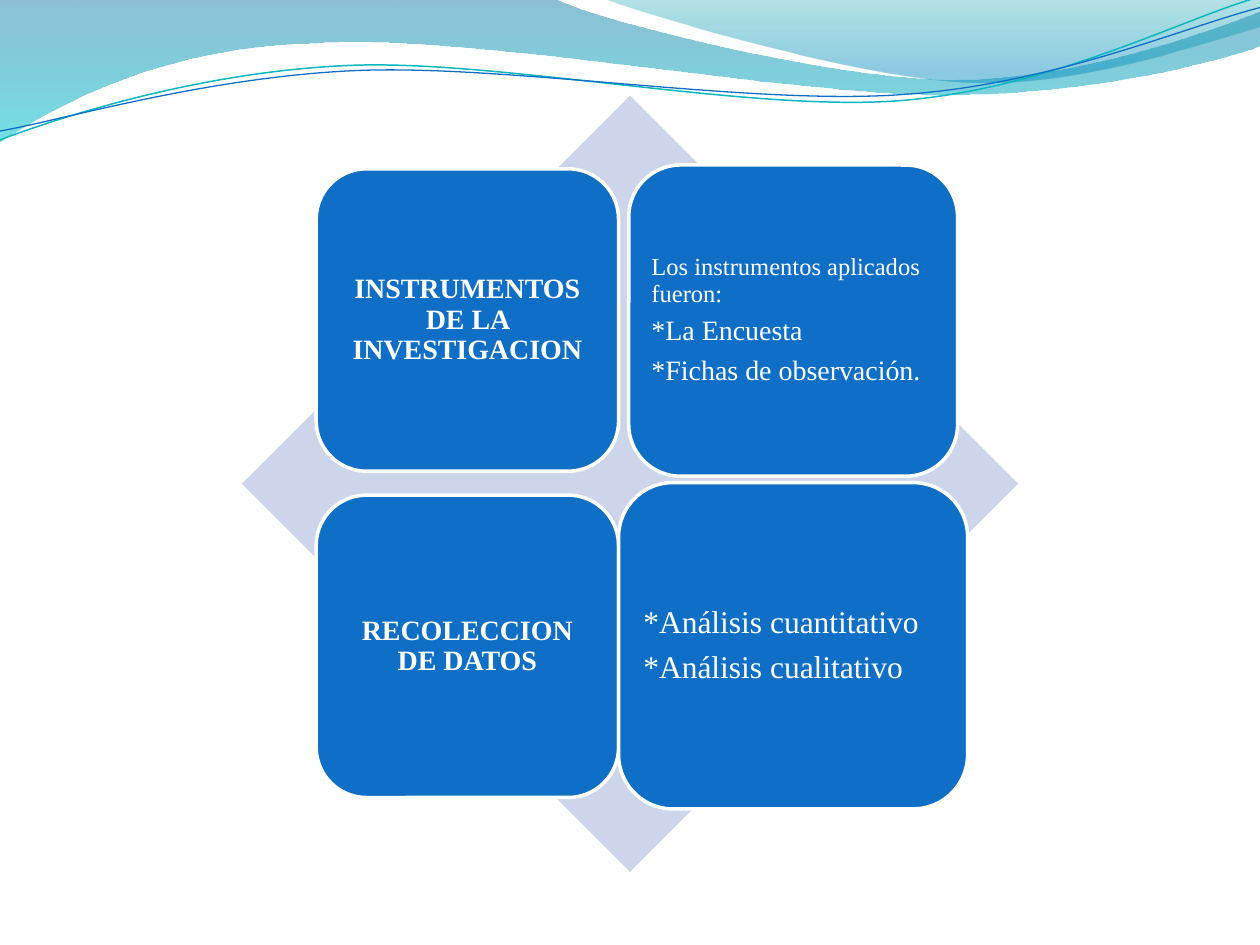
import math

from lxml import etree
from pptx import Presentation
from pptx.dml.color import RGBColor
from pptx.enum import shapes, text
from pptx.oxml import ns
from pptx.util import Inches, Pt

FONT = "Times New Roman"
BLUE, WHITE, PALE = "0F6FC6", "FFFFFF", "CCD5EA"
LINE_TILT = -2.7

# Each wave is a start point followed by lines (1 point) and cubic curves (3 points).
BROAD_WAVE = [[(0, 0)], [(4.4, -0.01)],
              [(4.76, 0.17), (6.64, 0.63), (7.58, 0.63)],
              [(8.53, 0.63), (9.58, 0.26), (10, 0.09)],
              [(10.01, 0.36)],
              [(9.83, 0.44), (8.7, 0.76), (7.46, 0.75)],
              [(6.22, 0.75), (3.82, 0.28), (2.57, 0.34)],
              [(1.29, 0.36), (0.46, 0.83), (-0.01, 1.13)], [(0, 0)]]
CORNER_WAVE = [[(4.79, -0.01)],
               [(5.09, 0.11), (6.82, 0.62), (7.69, 0.65)],
               [(8.56, 0.69), (9.61, 0.32), (10, 0.21)],
               [(10, 0)], [(4.79, -0.01)]]
TEAL_LINE = [[(0, 1.11)],
             [(0.48, 0.93), (1.58, 0.57), (2.77, 0.52)],
             [(3.95, 0.47), (5.93, 0.89), (7.13, 0.8)],
             [(8.33, 0.71), (9.38, 0.15), (9.98, -0.02)]]
BLUE_LINE = [[(0, 1.04)],
             [(0.47, 0.96), (1.64, 0.61), (2.83, 0.56)],
             [(4.03, 0.51), (5.97, 0.84), (7.17, 0.75)],
             [(8.36, 0.67), (9.41, 0.21), (10, 0.06)]]


def color(value):
    return RGBColor.from_string(value)


def to_local(point, box, tilt):
    """Place a slide point inside a box that is tilted about its centre."""
    left, top, width, height = box
    x, y = point[0] - left - width / 2, point[1] - top - height / 2
    cos, sin = math.cos(math.radians(tilt)), math.sin(math.radians(tilt))
    return x * cos + y * sin + width / 2, y * cos - x * sin + height / 2


def add_wave(slide, segments, box, closed, tilt=0):
    """Build the outline from its end points, then bend the curved segments."""
    start, *ends = [(Inches(s[-1][0]), Inches(s[-1][1])) for s in segments]
    builder = slide.shapes.build_freeform(*start)
    builder.add_line_segments(ends, close=closed)
    wave = builder.convert_to_shape()
    wave.shadow.inherit = False
    wave.left, wave.top, wave.width, wave.height = map(Inches, box)
    wave.rotation = tilt

    outline = next(wave.element.spPr.iter(ns.qn("a:path")))
    outline.set("w", str(wave.width))
    outline.set("h", str(wave.height))
    for move, segment in zip(list(outline), segments):
        for old in list(move):
            move.remove(old)
        if len(segment) == 3:
            curve = etree.Element(ns.qn("a:cubicBezTo"))
            outline.replace(move, curve)
            move = curve
        for point in segment:
            x, y = to_local(point, box, tilt)
            etree.SubElement(move, ns.qn("a:pt"), x=str(Inches(x)), y=str(Inches(y)))
    return wave


def add_gradient_wave(slide, segments, box, stops):
    """Fill from top to bottom; a stop is position, colour and opacity in percent."""
    wave = add_wave(slide, segments, box, closed=True)
    wave.line.fill.background()
    wave.fill.gradient()
    wave.fill.gradient_angle = 270
    for stop, (position, value, _) in zip(wave.fill.gradient_stops, stops):
        stop.position = position
        stop.color.rgb = color(value)
    for rgb, (_, _, opacity) in zip(wave.element.spPr.iter(ns.qn("a:srgbClr")), stops):
        etree.SubElement(rgb, ns.qn("a:alpha"), val=str(opacity * 1000))


def add_wave_line(slide, segments, box, value, width):
    wave = add_wave(slide, segments, box, closed=False, tilt=LINE_TILT)
    wave.fill.background()
    wave.line.color.rgb = color(value)
    wave.line.width = Pt(width)


def add_block(slide, kind, box, fill, outline=None):
    block = slide.shapes.add_shape(kind, *map(Inches, box))
    block.shadow.inherit = False
    block.fill.solid()
    block.fill.fore_color.rgb = color(fill)
    if outline:
        block.line.color.rgb = color(outline)
        block.line.width = Pt(2)
    else:
        block.line.fill.background()
    return block


def write(frame, lines, align=text.PP_ALIGN.LEFT, bold=False, inset=0.07):
    """Write one paragraph for each pair of wording and size."""
    frame.word_wrap = True
    frame.vertical_anchor = text.MSO_ANCHOR.MIDDLE
    frame.margin_left = frame.margin_right = Inches(inset)
    frame.margin_top = frame.margin_bottom = Inches(inset)
    for index, (wording, size) in enumerate(lines):
        paragraph = frame.add_paragraph() if index else frame.paragraphs[0]
        paragraph.alignment = align
        paragraph.line_spacing = 0.9
        paragraph.space_after = Pt(round(size * 0.35, 1))
        run = paragraph.add_run()
        run.text = wording
        run.font.name = FONT
        run.font.size = Pt(size)
        run.font.bold = bold
        run.font.color.rgb = color(WHITE)


def add_card(slide, box, lines, **style):
    card = add_block(slide, shapes.MSO_SHAPE.ROUNDED_RECTANGLE, box, BLUE, WHITE)
    write(card.text_frame, lines, **style)


def main():
    deck = Presentation()
    deck.slide_width, deck.slide_height = Inches(10), Inches(7.5)
    slide = deck.slides.add_slide(deck.slide_layouts[6])

    add_gradient_wave(slide, BROAD_WAVE, (-0.01, -0.01, 10.02, 1.14),
                      [(0, "0074A1", 45), (1, "00C6CF", 55)])
    add_gradient_wave(slide, CORNER_WAVE, (4.79, -0.01, 5.21, 0.7),
                      [(0, "00A1A9", 30), (0.8, "008BBF", 45)])
    add_wave_line(slide, TEAL_LINE, (-0.02, 0.22, 10.02, 0.71), "0AB8BF", 0.85)
    add_wave_line(slide, BLUE_LINE, (-0.02, 0.3, 10.03, 0.58), BLUE, 0.75)

    add_block(slide, shapes.MSO_SHAPE.DIAMOND, (1.92, 0.76, 6.16, 6.16), PALE)
    heading = {"align": text.PP_ALIGN.CENTER, "bold": True}
    add_card(slide, (2.51, 1.34, 2.4, 2.4),
             [("INSTRUMENTOS DE LA INVESTIGACION", 16)], **heading)
    add_card(slide, (4.99, 1.31, 2.61, 2.47),
             [("Los instrumentos aplicados fueron:", 14),
              ("*La Encuesta", 16),
              ("*Fichas de observación.", 16)], inset=0.06)
    add_card(slide, (2.51, 3.93, 2.4, 2.4),
             [("RECOLECCION DE DATOS", 16)], **heading)
    add_card(slide, (4.91, 3.83, 2.77, 2.59),
             [("*Análisis cuantitativo", 18), ("*Análisis cualitativo", 18)],
             align=text.PP_ALIGN.JUSTIFY)

    deck.save("out.pptx")


if __name__ == "__main__":
    main()
